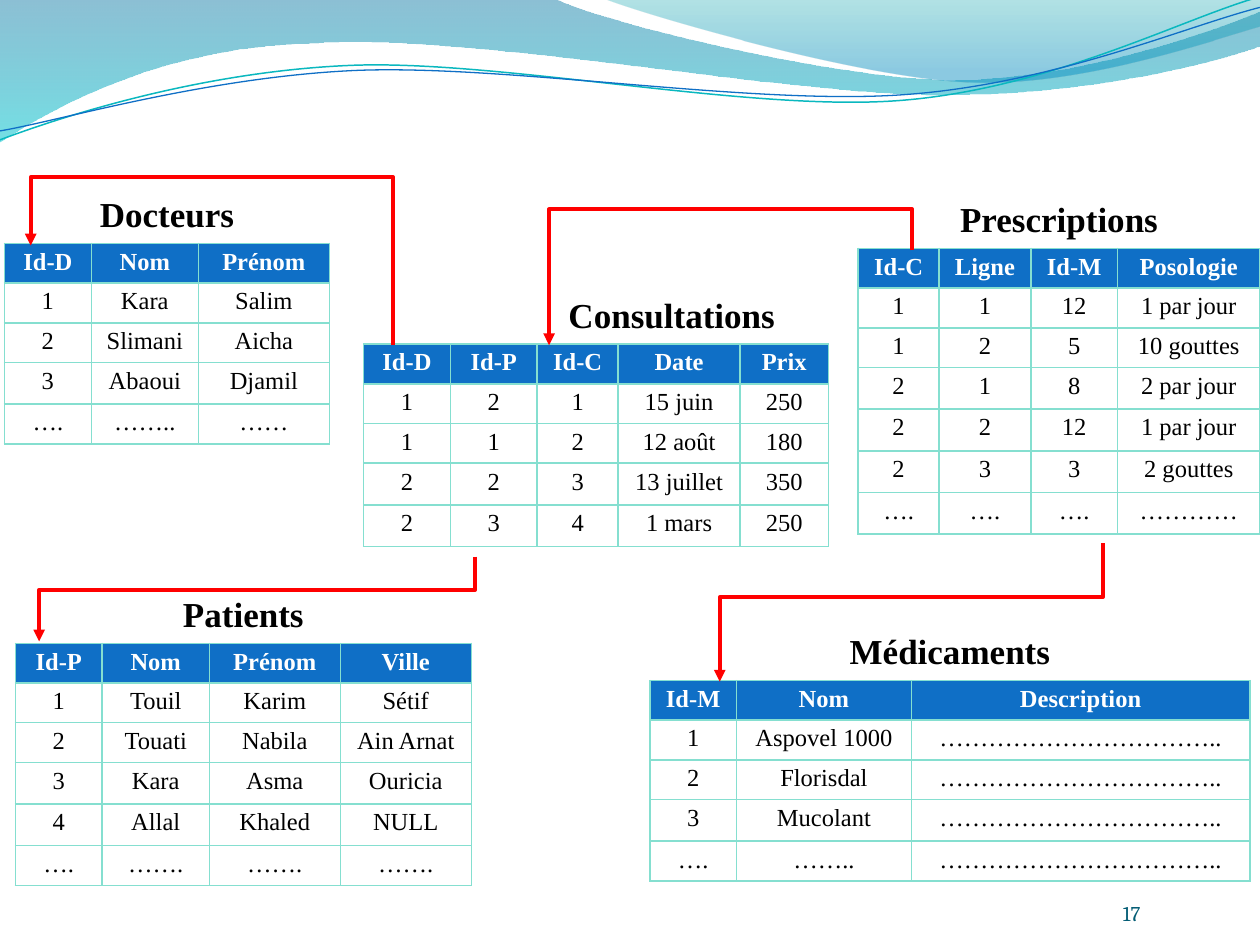
import pptx
import pptx.util
import pptx.dml.color
import pptx.enum.text
import pptx.oxml
import pptx.oxml.ns

Cm, Pt = pptx.util.Cm, pptx.util.Pt
RGB = pptx.dml.color.RGBColor
ALIGN = pptx.enum.text.PP_ALIGN
ANCHOR = pptx.enum.text.MSO_ANCHOR
qn = pptx.oxml.ns.qn

BLUE = RGB(0x0F, 0x6F, 0xC6)
MINT = RGB(0x85, 0xDF, 0xD0)
TEAL = RGB(0x0A, 0xB8, 0xBF)
RED = RGB(0xFF, 0x00, 0x00)
BLACK = RGB(0x00, 0x00, 0x00)
WHITE = RGB(0xFF, 0xFF, 0xFF)
PETROL = RGB(0x04, 0x5D, 0x75)

DOTS = "…………………………….."
TABLES = [
    {"title": "Docteurs", "at": (0.09, 3.86), "cols": (1.75, 2.16, 2.64), "tall": 1,
     "rows": [("Id-D", "Nom", "Prénom"),
              ("1", "Kara", "Salim"),
              ("2", "Slimani", "Aicha"),
              ("3", "Abaoui", "Djamil"),
              ("….", "……..", "……")]},
    {"title": "Consultations", "at": (7.33, 5.89), "indent": 3.98, "tall": 2,
     "cols": (1.75, 1.75, 1.63, 2.46, 1.78),
     "rows": [("Id-D", "Id-P", "Id-C", "Date", "Prix"),
              ("1", "2", "1", "15 juin", "250"),
              ("1", "1", "2", "12 août", "180"),
              ("2", "2", "3", "13 juillet", "350"),
              ("2", "3", "4", "1 mars", "250")]},
    {"title": "Patients", "at": (0.31, 11.92), "cols": (1.75, 2.16, 2.64, 2.64), "tall": 2,
     "rows": [("Id-P", "Nom", "Prénom", "Ville"),
              ("1", "Touil", "Karim", "Sétif"),
              ("2", "Touati", "Nabila", "Ain Arnat"),
              ("3", "Kara", "Asma", "Ouricia"),
              ("4", "Allal", "Khaled", "NULL"),
              ("….", "…….", "…….", "…….")]},
    {"title": "Prescriptions", "at": (17.3, 3.96), "cols": (1.63, 1.85, 1.75, 2.87), "tall": 4,
     "rows": [("Id-C", "Ligne", "Id-M", "Posologie"),
              ("1", "1", "12", "1 par jour"),
              ("1", "2", "5", "10 gouttes"),
              ("2", "1", "8", "2 par jour"),
              ("2", "2", "12", "1 par jour"),
              ("2", "3", "3", "2 gouttes"),
              ("….", "….", "….", "…………")]},
    {"title": "Médicaments", "at": (13.1, 12.67), "cols": (1.75, 3.52, 6.83), "tall": 1,
     "rows": [("Id-M", "Nom", "Description"),
              ("1", "Aspovel 1000", DOTS),
              ("2", "Florisdal", DOTS),
              ("3", "Mucolant", DOTS),
              ("….", "……..", DOTS)]},
]

LINKS = [
    (7.92, 6.96, 3.57, 0.62, 4.95),
    (9.58, 11.22, 11.89, 0.79, 12.93),
    (18.39, 5.05, 4.22, 11.07, 6.96),
    (22.23, 10.95, 12.04, 14.51, 13.74),
]

BANDS = [
    ([(0, 0), (11.18, -0.03), (12.09, 0.43, 16.87, 1.6, 19.25, 1.6),
      (21.67, 1.6, 24.33, 0.66, 25.4, 0.23), (25.43, 0.91),
      (24.97, 1.12, 22.1, 1.93, 18.95, 1.91), (15.8, 1.91, 9.7, 0.71, 6.53, 0.86),
      (3.28, 0.91, 1.17, 2.11, -0.03, 2.87)],
     [(0, RGB(0x00, 0x74, 0xA1), 45), (1, RGB(0x00, 0xC6, 0xCF), 55)]),
    ([(12.17, -0.03), (12.93, 0.28, 17.32, 1.57, 19.53, 1.65),
      (21.74, 1.75, 24.41, 0.81, 25.4, 0.53), (25.4, 0)],
     [(0, RGB(0x00, 0xA1, 0xA9), 30), (0.8, RGB(0x00, 0x8B, 0xBF), 45)]),
]

WAVES = [
    ([(0, 2.82), (1.22, 2.36, 4.01, 1.45, 7.04, 1.32),
      (10.03, 1.19, 15.06, 2.26, 18.11, 2.03), (21.16, 1.8, 23.83, 0.38, 25.35, -0.05)],
     TEAL, 0.85),
    ([(0, 2.64), (1.19, 2.44, 4.17, 1.55, 7.19, 1.42),
      (10.24, 1.3, 15.16, 2.13, 18.21, 1.91), (21.23, 1.7, 23.9, 0.53, 25.4, 0.15)],
     BLUE, 0.75),
]


def apply(obj, vals):
    for key, val in vals.items():
        setattr(obj, key, val)


def node(tag, inner="", attrs=""):
    ns = pptx.oxml.ns.nsdecls("a")
    return pptx.oxml.parse_xml(f"<a:{tag} {ns} {attrs}>{inner}</a:{tag}>")


def bend(shape, steps):
    legs = iter(list(shape._element.iter(qn("a:lnTo"))))
    for step in steps[1:]:
        group = [next(legs) for _ in range(len(step) // 2)]
        if len(group) == 3:
            curve = node("cubicBezTo")
            group[0].addprevious(curve)
            for leg in group:
                curve.append(leg[0])
                leg.getparent().remove(leg)


def outline(slide, steps, close=False):
    pts = [(Cm(s[i]), Cm(s[i + 1])) for s in steps for i in range(0, len(s), 2)]
    pen = slide.shapes.build_freeform(*pts[0])
    pen.add_line_segments(pts[1:], close=close)
    shape = pen.convert_to_shape()
    shape.shadow.inherit = False
    bend(shape, steps)
    return shape


def stroke(slide, steps, color, width):
    shape = outline(slide, steps)
    shape.fill.background()
    shape.line.color.rgb = color
    shape.line.width = Pt(width)
    return shape


def band(slide, steps, stops):
    shape = outline(slide, steps, True)
    shape.line.fill.background()
    shape.fill.gradient()
    shape.fill.gradient_angle = 270
    for stop, (pos, color, _) in zip(shape.fill.gradient_stops, stops):
        stop.position = pos
        stop.color.rgb = color
    tints = shape._element.spPr.find(qn("a:gradFill")).iter(qn("a:srgbClr"))
    for tint, (_, _, alpha) in zip(tints, stops):
        tint.append(node("alpha", attrs=f'val="{alpha * 1000}"'))


def link(slide, x1, y1, mid, x2, y2):
    shape = stroke(slide, [(x1, y1), (x1, mid), (x2, mid), (x2, y2)], RED, 2.25)
    shape._element.spPr.find(qn("a:ln")).append(node("tailEnd", attrs='type="triangle"'))


def write(frame, text, align, font):
    para = frame.paragraphs[0]
    para.alignment = align
    run = para.add_run()
    run.text = text
    apply(run.font, {k: v for k, v in font.items() if k != "color"})
    run.font.color.rgb = font["color"]


def edge(cell, sides):
    props = cell._tc.get_or_add_tcPr()
    paint = f'<a:solidFill><a:srgbClr val="{MINT}"/></a:solidFill>'
    for side in "LRTB":
        props.append(node("ln" + side, paint if side in sides else "<a:noFill/>", 'w="12700"'))


def grid(slide, data):
    cols, rows = data["cols"], data["rows"]
    full = [(data["title"],) + ("",) * (len(cols) - 1)] + rows
    highs = [1.02] + [0.84 if 3 <= i < 3 + data["tall"] else 0.8 for i in range(len(rows))]
    if data["tall"] == 4:
        highs[-1] = 0.84
    left, top = data["at"]
    table = slide.shapes.add_table(len(full), len(cols), Cm(left), Cm(top),
                                   Cm(sum(cols)), Cm(sum(highs))).table
    apply(table, {"first_row": False, "horz_banding": False})
    for col, wide in zip(table.columns, cols):
        col.width = Cm(wide)
    for row, high in zip(table.rows, highs):
        row.height = Cm(high)
    table.cell(0, 0).merge(table.cell(0, len(cols) - 1))
    for r, words in enumerate(full):
        font = {"name": "Times New Roman", "size": Pt(14 if r else 20), "bold": r < 2,
                "color": WHITE if r == 1 else BLACK}
        for c, text in enumerate(words):
            cell = table.cell(r, c)
            apply(cell, {"margin_left": Cm(0.15), "margin_right": Cm(0.15),
                         "margin_top": Cm(0.1), "margin_bottom": Cm(0.1),
                         "vertical_anchor": ANCHOR.TOP})
            edge(cell, "LRTB" if r else "B")
            if r == 1:
                cell.fill.solid()
                cell.fill.fore_color.rgb = BLUE
            else:
                cell.fill.background()
            if text:
                write(cell.text_frame, text, ALIGN.CENTER, font)
    if "indent" in data:
        para = table.cell(0, 0).text_frame.paragraphs[0]
        para.alignment = ALIGN.LEFT
        para._p.get_or_add_pPr().set("marL", str(Cm(data["indent"])))


def number(slide, text):
    frame = slide.shapes.add_textbox(Cm(20.88), Cm(17.65), Cm(2.11), Cm(1.02)).text_frame
    apply(frame, {"word_wrap": True, "vertical_anchor": ANCHOR.BOTTOM, "margin_left": 0,
                  "margin_right": 0, "margin_top": 0, "margin_bottom": 0})
    write(frame, text, ALIGN.RIGHT, {"name": "Cambria", "size": Pt(12), "color": PETROL})


def main():
    deck = pptx.Presentation()
    apply(deck, {"slide_width": Cm(25.4), "slide_height": Cm(19.05)})
    slide = deck.slides.add_slide(deck.slide_layouts[6])
    for steps, stops in BANDS:
        band(slide, steps, stops)
    for wave in WAVES:
        stroke(slide, *wave)
    number(slide, "17")
    for data in TABLES:
        grid(slide, data)
    for ends in LINKS:
        link(slide, *ends)
    deck.save("out.pptx")


if __name__ == "__main__":
    main()
